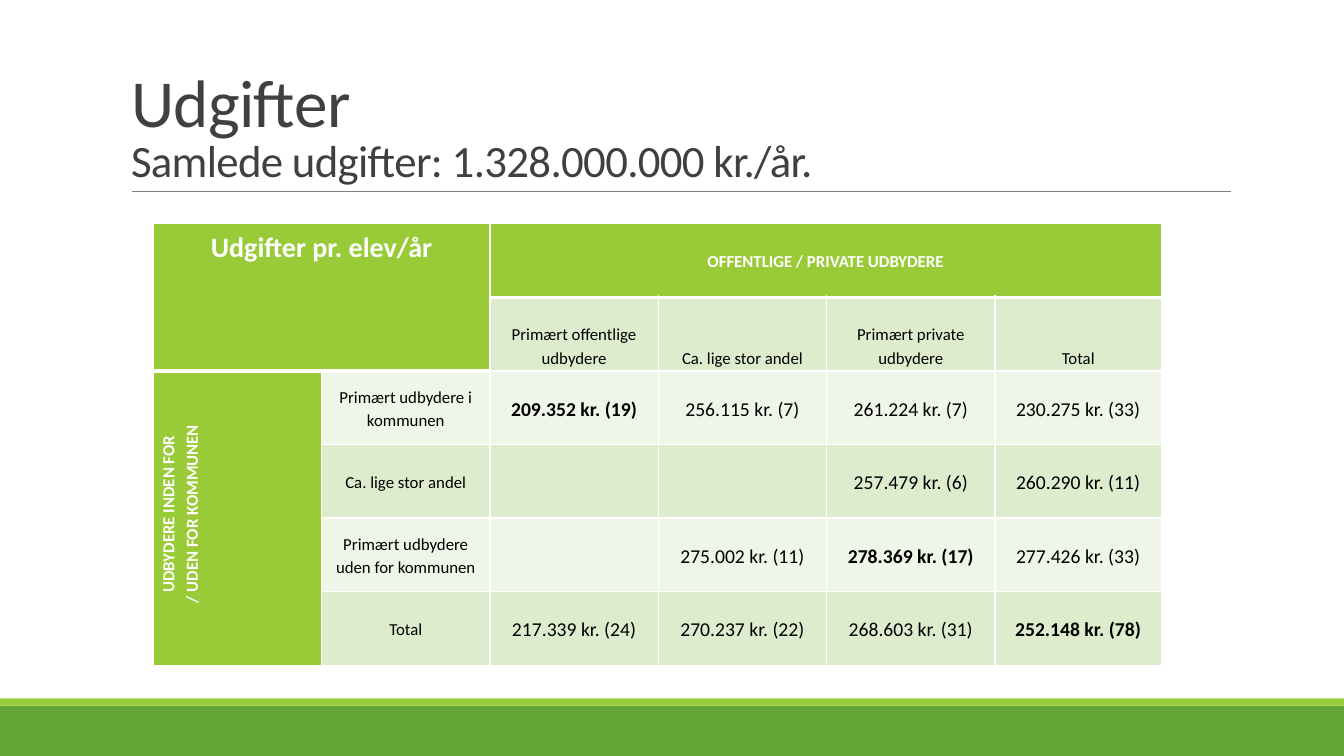
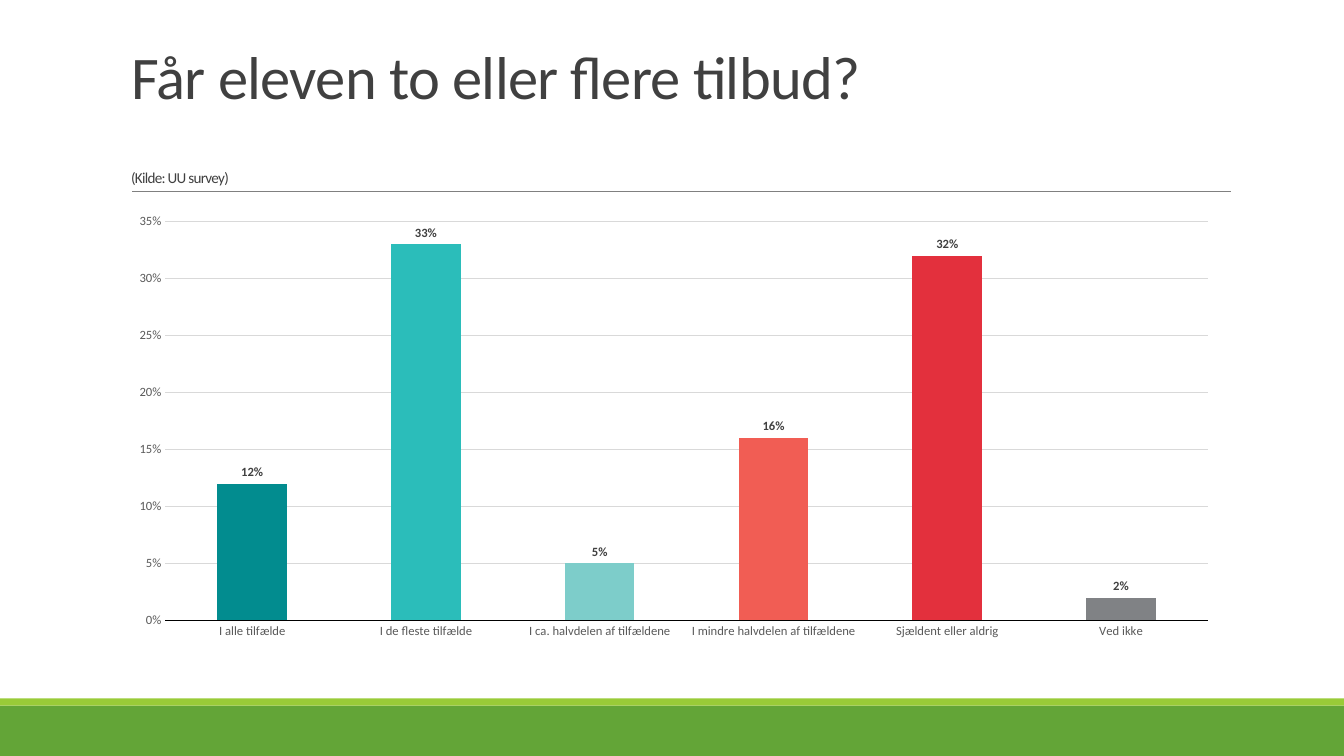
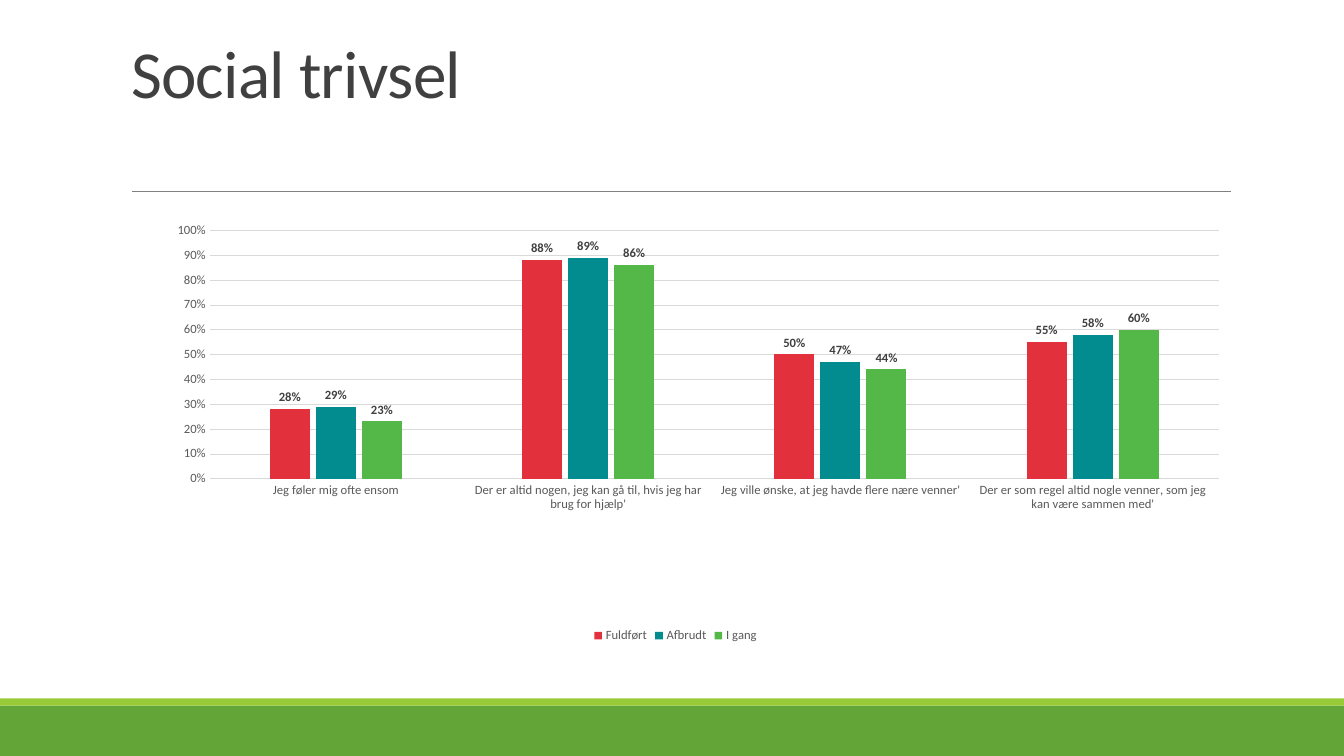
from lxml import etree
from pptx import Presentation
from pptx.chart.data import CategoryChartData
from pptx.dml.color import RGBColor
from pptx.enum.chart import XL_CHART_TYPE, XL_LABEL_POSITION, XL_LEGEND_POSITION, XL_TICK_MARK
from pptx.enum.shapes import MSO_CONNECTOR, MSO_SHAPE
from pptx.enum.text import MSO_ANCHOR, MSO_AUTO_SIZE, PP_ALIGN
from pptx.oxml.ns import qn
from pptx.util import Inches, Pt

FONT = "Calibri"
GREEN, LIME, WHITE, BLACK = "63A537", "99CB38", "FFFFFF", "000000"
TITLE_GREY, AXIS_GREY, GRID_GREY, RULE_GREY = "404040", "595959", "D9D9D9", "808080"
ROW_TINTS = ("EFF6E8", "DEECCE")
TEAL, RED = "028C8F", "E3303D"

EXPENSES = [
    ["Udgifter pr. elev/år", "", "OFFENTLIGE / PRIVATE UDBYDERE", "", "", ""],
    ["", "", "Primært offentlige udbydere", "Ca. lige stor andel", "Primært private udbydere", "Total"],
    ["UDBYDERE INDEN FOR\n/ UDEN FOR KOMMUNEN", "Primært udbydere i kommunen",
     "209.352 kr. (19)", "256.115 kr. (7)", "261.224 kr. (7)", "230.275 kr. (33)"],
    ["", "Ca. lige stor andel", "", "", "257.479 kr. (6)", "260.290 kr. (11)"],
    ["", "Primært udbydere\nuden for kommunen", "", "275.002 kr. (11)", "278.369 kr. (17)", "277.426 kr. (33)"],
    ["", "Total", "217.339 kr. (24)", "270.237 kr. (22)", "268.603 kr. (31)", "252.148 kr. (78)"],
]
HIGHLIGHTS = {(2, 2), (4, 4), (5, 5)}
MERGES = [((0, 0), (1, 1)), ((0, 2), (0, 5)), ((2, 0), (5, 0))]


def rgb(value):
    """Turn a hex string into a colour."""
    return RGBColor.from_string(value)


def style_font(font, size, color, bold=False):
    """Apply the deck font with a size, colour and weight."""
    font.name, font.size, font.bold = FONT, Pt(size), bold
    font.color.rgb = rgb(color)


def write(frame, text, size=12, color=BLACK, bold=False, align=PP_ALIGN.LEFT,
          leading=1.15, after=0, tracking=0, indent=0):
    """Write one formatted paragraph into a text frame."""
    paragraph = frame.add_paragraph() if frame.text else frame.paragraphs[0]
    paragraph.alignment = align
    paragraph.line_spacing = leading
    paragraph.space_before, paragraph.space_after = Pt(0), Pt(after)
    if indent:
        paragraph._p.get_or_add_pPr().set("marL", str(Inches(indent)))
    run = paragraph.add_run()
    run.text = text
    style_font(run.font, size, color, bold)
    if tracking:
        run._r.get_or_add_rPr().set("spc", str(int(tracking * 100)))


def set_borders(cell, bottom):
    """Give a table cell white borders with its own bottom width."""
    properties = cell._tc.get_or_add_tcPr()
    for position, (side, width) in enumerate([("L", 1), ("R", 1), ("T", 1), ("B", bottom)]):
        border = etree.Element(qn(f"a:ln{side}"), w=str(Pt(width)))
        fill = etree.SubElement(border, qn("a:solidFill"))
        etree.SubElement(fill, qn("a:srgbClr"), val=WHITE)
        properties.insert(position, border)


def place_plot(chart, bounds):
    """Fix the inner plot area as fractions of the chart."""
    plot_area = chart.element.find(".//" + qn("c:plotArea"))
    for automatic in plot_area.findall(qn("c:layout")):
        plot_area.remove(automatic)
    layout = etree.Element(qn("c:layout"))
    manual = etree.SubElement(layout, qn("c:manualLayout"))
    settings = [("layoutTarget", "inner"), ("xMode", "edge"), ("yMode", "edge")]
    for tag, value in settings + list(zip("xywh", bounds)):
        etree.SubElement(manual, qn(f"c:{tag}"), val=str(value))
    plot_area.insert(0, layout)


class Deck:
    """Hold the shared style and the current slide."""

    def __init__(self):
        """Open a widescreen deck and clear its layout."""
        self.presentation = Presentation()
        self.presentation.slide_width = Inches(13.33)
        self.presentation.slide_height = Inches(7.5)
        self.layout = self.presentation.slide_layouts[5]
        self.slide = None
        heading, *footers = self.layout.placeholders
        self.place_title(heading)
        for footer in footers:
            self.layout.shapes.element.remove(footer.element)

    def place_title(self, heading):
        """Move a title to its place in the deck."""
        heading.left, heading.top = Inches(1.2), Inches(0.31)
        heading.width, heading.height = Inches(11), Inches(1.59)

    def add_slide(self, *title_lines, bottom=0.05):
        """Start a slide whose title lines are text, size and space after."""
        self.slide = self.presentation.slides.add_slide(self.layout)
        if len(self.presentation.slides) == 1:
            self.add_background()
        heading = self.slide.shapes.title
        self.place_title(heading)
        frame = heading.text_frame
        frame.word_wrap, frame.auto_size = True, MSO_AUTO_SIZE.NONE
        frame.vertical_anchor, frame.margin_bottom = MSO_ANCHOR.BOTTOM, Inches(bottom)
        for text, size, after in title_lines:
            write(frame, text, size=size, color=TITLE_GREY, leading=0.85, after=after, tracking=-0.5)

    def add_background(self):
        """Draw the bands and title rule and hand them to the layout."""
        parts = [self.add_band(7, 0.5, GREEN), self.add_band(6.93, 0.07, LIME), self.add_rule()]
        for part in parts:
            self.layout.shapes.element.append(part.element)

    def add_band(self, top, height, color):
        """Draw one band across the slide."""
        band = self.slide.shapes.add_shape(
            MSO_SHAPE.RECTANGLE, 0, Inches(top), self.presentation.slide_width, Inches(height))
        band.shadow.inherit = False
        band.fill.solid()
        band.fill.fore_color.rgb = rgb(color)
        band.line.fill.background()
        return band

    def add_rule(self):
        """Draw the line under the title."""
        rule = self.slide.shapes.add_connector(
            MSO_CONNECTOR.STRAIGHT, Inches(1.31), Inches(1.9), Inches(12.21), Inches(1.9))
        rule.line.color.rgb, rule.line.width = rgb(RULE_GREY), Pt(0.5)
        etree.SubElement(rule.element.spPr, qn("a:effectLst"))
        return rule

    def add_expenses(self, rows):
        """Draw the table of expenses per pupil."""
        table = self.slide.shapes.add_table(
            len(rows), len(rows[0]), Inches(1.52), Inches(2.22), Inches(10), Inches(4.38)).table
        for column in table.columns:
            column.width = Inches(1.67)
        table.columns[5].width = Inches(1.65)
        for row in table.rows:
            row.height = Inches(0.73)
        for start, end in MERGES:
            table.cell(*start).merge(table.cell(*end))
        for row, texts in enumerate(rows):
            for column, text in enumerate(texts):
                self.fill_cell(table.cell(row, column), row, column, text)

    def fill_cell(self, cell, row, column, text):
        """Format a cell by its place in the table."""
        corner = row < 2 and column < 2
        heading = row == 0 or column == 0 or corner
        amount = row > 1 and column > 1
        cell.fill.solid()
        cell.fill.fore_color.rgb = rgb(LIME if heading else ROW_TINTS[row % 2])
        set_borders(cell, 3 if row == 0 or corner else 1)
        cell.margin_left = cell.margin_right = cell.margin_top = cell.margin_bottom = Inches(0.02)
        if corner:
            cell.vertical_anchor = MSO_ANCHOR.TOP
        else:
            cell.vertical_anchor = MSO_ANCHOR.BOTTOM if row == 1 else MSO_ANCHOR.MIDDLE
        sideways = column == 0 and row > 1
        if sideways:
            cell._tc.get_or_add_tcPr().set("vert", "vert270")
        for line in text.split("\n") if text else []:
            write(cell.text_frame, line, size=20 if corner else 14 if amount else 12,
                  color=WHITE if heading else BLACK, bold=heading or (row, column) in HIGHLIGHTS,
                  align=PP_ALIGN.CENTER, indent=0.08 if sideways else 0)

    def add_columns(self, categories, series, gap, overlap, top_value, step, base_color, plot_bounds,
                    point_colors=(), legend=False):
        """Draw a column chart from name, colour and values of each series."""
        data = CategoryChartData(number_format="0%")
        data.categories = categories
        for name, _, values in series:
            data.add_series(name, values)
        chart = self.slide.shapes.add_chart(
            XL_CHART_TYPE.COLUMN_CLUSTERED, Inches(1.2), Inches(2.02), Inches(11), Inches(4.4), data).chart
        style_font(chart.font, 10, BLACK)
        chart.has_title = False
        chart.has_legend = legend
        if legend:
            chart.legend.position = XL_LEGEND_POSITION.BOTTOM
            chart.legend.include_in_layout = False
            style_font(chart.legend.font, 9, AXIS_GREY)
        plot = chart.plots[0]
        plot.vary_by_categories = False
        plot.gap_width, plot.overlap = gap, overlap
        for columns, (_, color, _) in zip(plot.series, series):
            self.style_columns(columns, color, point_colors)
        self.style_axes(chart, top_value, step, base_color)
        place_plot(chart, plot_bounds)

    def style_columns(self, columns, color, point_colors):
        """Colour one series and label its values."""
        columns.invert_if_negative = False
        fills = [columns.format.fill]
        fills += [columns.points[index].format.fill for index in range(len(point_colors))]
        for fill, shade in zip(fills, [color, *point_colors]):
            fill.solid()
            fill.fore_color.rgb = rgb(shade)
        labels = columns.data_labels
        labels.show_value = True
        labels.position = XL_LABEL_POSITION.OUTSIDE_END
        labels.number_format, labels.number_format_is_linked = "0%", False
        style_font(labels.font, 9, TITLE_GREY, bold=True)

    def style_axes(self, chart, top_value, step, base_color):
        """Set the scale, grid and fonts of both axes."""
        scale, groups = chart.value_axis, chart.category_axis
        for axis in (scale, groups):
            axis.major_tick_mark = axis.minor_tick_mark = XL_TICK_MARK.NONE
            style_font(axis.tick_labels.font, 9, AXIS_GREY)
        groups.format.line.color.rgb, groups.format.line.width = rgb(base_color), Pt(0.75)
        scale.minimum_scale, scale.maximum_scale, scale.major_unit = 0, top_value, step
        scale.tick_labels.number_format, scale.tick_labels.number_format_is_linked = "0%", False
        scale.format.line.fill.background()
        grid = scale.major_gridlines.format.line
        grid.color.rgb, grid.width = rgb(GRID_GREY), Pt(0.1)


def main():
    """Build the three slides and save them."""
    deck = Deck()

    deck.add_slide(("Udgifter", 48, 0), ("Samlede udgifter: 1.328.000.000 kr./år.", 32, 0))
    deck.add_expenses(EXPENSES)

    deck.add_slide(("Får eleven to eller flere tilbud?", 43.2, 42), ("(Kilde: UU survey)", 10.8, 0))
    deck.add_columns(
        ["I alle tilfælde", "I de fleste tilfælde", "I ca. halvdelen af tilfældene",
         "I mindre halvdelen af tilfældene", "Sjældent eller aldrig", "Ved ikke"],
        [("Series 1", LIME, (0.12, 0.33, 0.05, 0.16, 0.32, 0.02))],
        gap=150, overlap=-27, top_value=0.35, step=0.05, base_color=BLACK,
        plot_bounds=(0.04, 0.04, 0.94, 0.9),
        point_colors=(TEAL, "2BBDBA", "7DCDCA", "F15D54", RED, "808285"))

    deck.add_slide(("Social trivsel", 48, 0), bottom=0.79)
    deck.add_columns(
        ["Jeg føler mig ofte ensom",
         "Der er altid nogen, jeg kan gå til, hvis jeg har brug for hjælp'",
         "Jeg ville ønske, at jeg havde flere nære venner'",
         "Der er som regel altid nogle venner, som jeg kan være sammen med'"],
        [("Fuldført", RED, (0.28, 0.88, 0.5, 0.55)),
         ("Afbrudt", TEAL, (0.29, 0.89, 0.47, 0.58)),
         ("I gang", "54B848", (0.23, 0.86, 0.44, 0.6))],
        gap=300, overlap=-15, top_value=1, step=0.1, base_color=GRID_GREY,
        plot_bounds=(0.08, 0.06, 0.91, 0.56), legend=True)

    deck.presentation.save("out.pptx")


if __name__ == "__main__":
    main()
